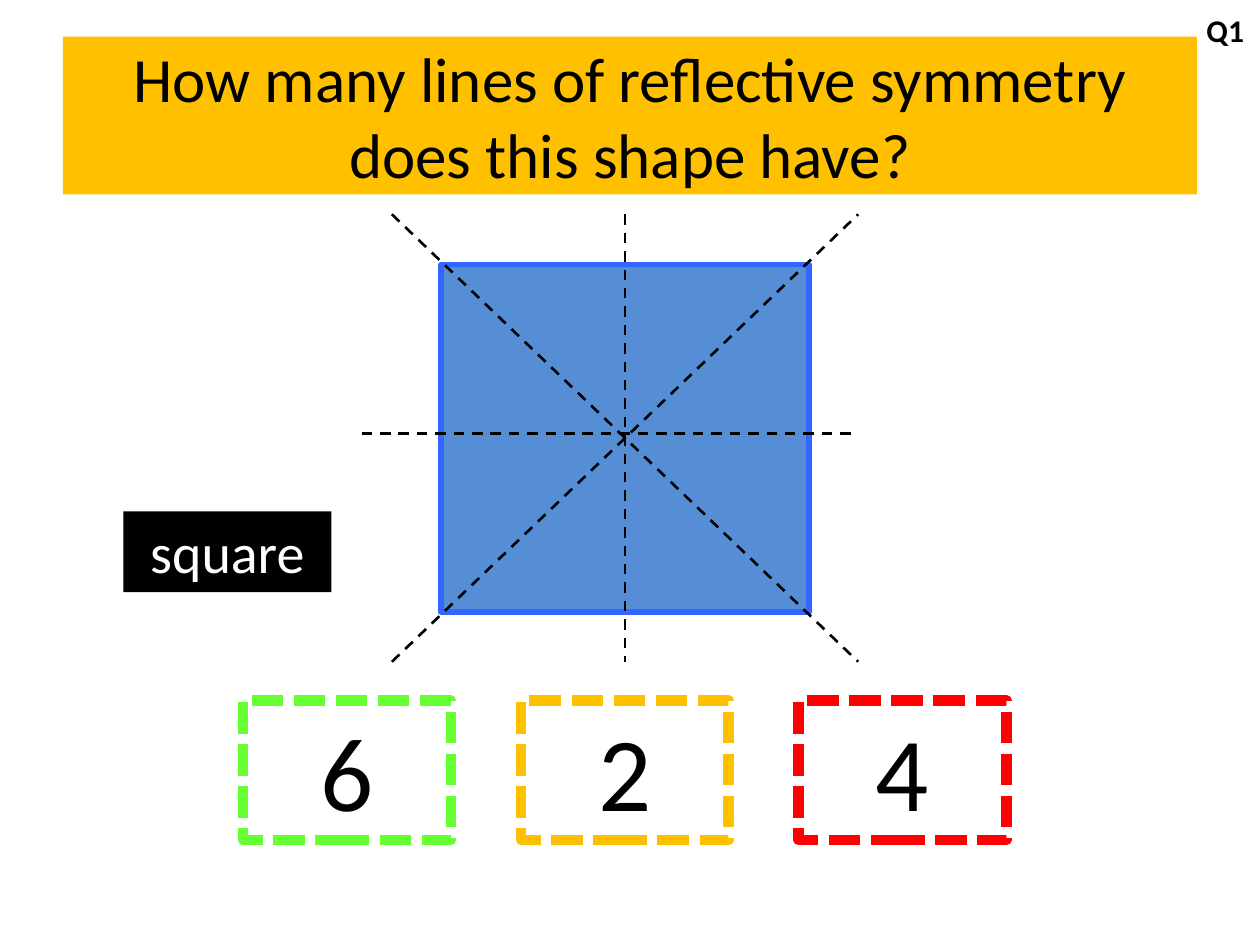
from pptx import Presentation
from pptx.dml.color import RGBColor as RGB
from pptx.enum.dml import MSO_LINE as DASH
from pptx.enum.shapes import MSO_CONNECTOR as CONN, MSO_SHAPE as SHAPE
from pptx.enum.text import MSO_ANCHOR as ANCHOR, PP_ALIGN as ALIGN
from pptx.oxml.ns import qn
from pptx.util import Cm, Pt


def paint(fmt, color):
    """Apply a hex colour to a fill, or no fill when color is None."""
    if color is None:
        fmt.background()
    else:
        fmt.solid()
        fmt.fore_color.rgb = RGB.from_string(color)


def add_box(box, fill=None, line=None, text="", anchor=ANCHOR.TOP, **font):
    """Add a rectangle; line is (colour, points, dash), font holds font values."""
    sp = slide.shapes.add_shape(SHAPE.RECTANGLE, *map(Cm, box))
    sp.shadow.inherit = False
    paint(sp.fill, fill)
    color, width, dash = line or (None, 0, None)
    paint(sp.line.fill, color)
    if line:
        sp.line.width, sp.line.dash_style = Pt(width), dash
    if text:
        tf = sp.text_frame
        tf.word_wrap, tf.vertical_anchor = True, anchor
        p = tf.paragraphs[0]
        p.alignment = ALIGN.CENTER
        r = p.add_run()
        r.text = text
        paint(r.font.fill, font.pop("color", "000000"))
        for name, value in {"name": "Calibri", **font}.items():
            setattr(r.font, name, value)


prs = Presentation()
prs.slide_width, prs.slide_height = Cm(25.4), Cm(19.05)
slide = prs.slides.add_slide(prs.slide_layouts[6])

# Question and square
add_box((1.27, 0.74, 22.86, 3.18), fill="FFC000", anchor=ANCHOR.MIDDLE, size=Pt(36),
        text="How many lines of reflective symmetry does this shape have?")
add_box((8.89, 5.33, 7.42, 7.01), fill="558ED5", line=("3366FF", 3, DASH.SOLID))

# Answer choices
answers = [("6", "66FF33"), ("2", "FFC000"), ("4", "FF0000")]
for i, (answer, color) in enumerate(answers):
    add_box((4.9 + 5.6 * i, 14.12, 4.19, 2.82), text=answer, size=Pt(60),
            line=(color, 6, DASH.SQUARE_DOT))

# Labels
add_box((23.9, 0.1, 1.6, 1.02), text="Q1", size=Pt(18), bold=True)
add_box((2.49, 10.31, 4.19, 1.63), fill="000000", text="square", size=Pt(32),
        color="FFFFFF")

# Lines of symmetry
left, right, top, bottom = 7.9, 17.3, 4.32, 13.34
mid_x, mid_y = 12.6, 8.74
axes = [
    (left, bottom, right, top),
    (left, top, right, bottom),
    (7.29, mid_y, right, mid_y),
    (mid_x, top, mid_x, bottom),
]
for axis in axes:
    cn = slide.shapes.add_connector(CONN.STRAIGHT, *map(Cm, axis))
    paint(cn.line.fill, "000000")
    cn.line.width, cn.line.dash_style = Pt(1.5), DASH.DASH
    sp_pr = cn._element.spPr
    sp_pr.append(sp_pr.makeelement(qn("a:effectLst"), {}))

prs.save("out.pptx")
